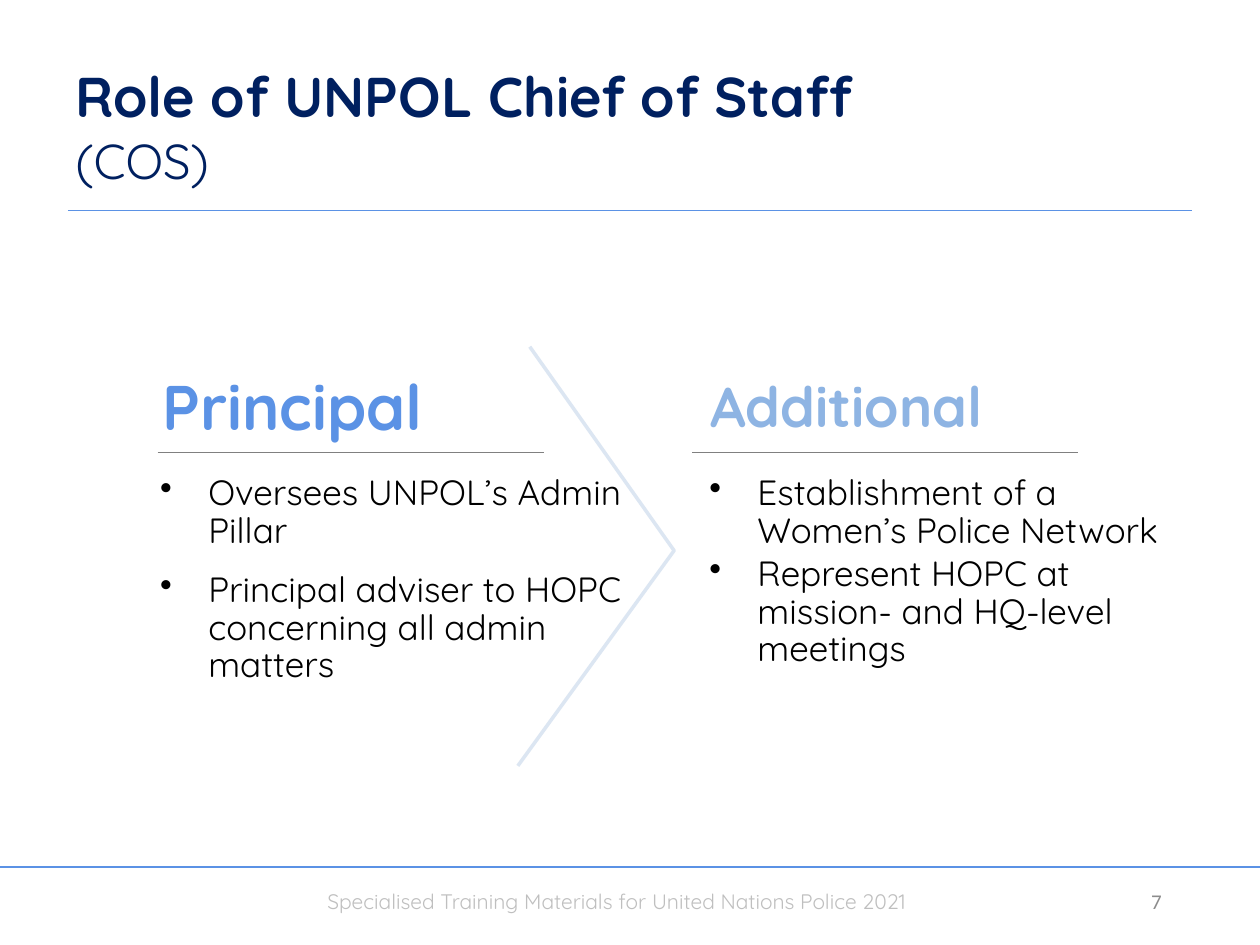
from dataclasses import dataclass

from lxml.etree import SubElement
from pptx import Presentation
from pptx.dml.color import RGBColor
from pptx.enum.shapes import MSO_CONNECTOR as Connector
from pptx.enum.text import MSO_ANCHOR as Anchor, PP_ALIGN as Align
from pptx.oxml.ns import qn
from pptx.slide import Slide
from pptx.text.text import TextFrame, _Paragraph as Paragraph
from pptx.util import Cm, Pt

COLOURS = {
    "navy": "002060",
    "blue": "5B92E5",
    "sky": "8EB4E3",
    "pale": "DCE6F2",
    "grey": "808080",
    "footer": "BFBFBF",
    "number": "8C8C8C",
    "black": "000000",
}
FONT = "Quicksand"
HEADING_TOP, RULE_TOP, DUTIES_TOP = 6.99, 9.12, 9.53
HANGING = 0.97


@dataclass
class Box:
    """A rectangle in centimetres."""

    left: float
    top: float
    width: float
    height: float


@dataclass
class RoleColumn:
    """A heading with a rule and its bulleted duties."""

    heading: str
    colour: str
    size: int
    heading_left: float
    heading_inset: float
    rule_left: float
    duties_left: float
    duties_width: float
    duties_height: float
    duties: list[tuple[str, float]]


COLUMNS = [
    RoleColumn("Principal", "blue", 36, 2.34, 0.38, 3.18, 3.18, 9.55, 5.87, [
        ("Oversees UNPOL’s Admin Pillar", 12.2),
        ("Principal adviser to HOPC concerning all admin matters", 3),
    ]),
    RoleColumn("Additional", "sky", 32, 13.51, 0.33, 13.95, 14.25, 9.47, 5.54, [
        ("Establishment of a Women’s Police Network", 3),
        ("Represent HOPC at mission- and HQ-level meetings", 3),
    ]),
]


def rgb(colour: str) -> RGBColor:
    """Look up a named colour."""
    return RGBColor.from_string(COLOURS[colour])


def add_frame(slide: Slide, box: Box, anchor: Anchor = Anchor.TOP,
              insets: tuple[float, float] = (0.25, 0.13)) -> TextFrame:
    """Add a wrapping text box and return its frame."""
    frame = slide.shapes.add_textbox(
        Cm(box.left), Cm(box.top), Cm(box.width), Cm(box.height)).text_frame
    frame.word_wrap = True
    frame.vertical_anchor = anchor
    frame.margin_left = frame.margin_right = Cm(insets[0])
    frame.margin_top = frame.margin_bottom = Cm(insets[1])
    return frame


def add_run(paragraph: Paragraph, words: str, size: int, colour: str,
            bold: bool = False, font: str = FONT) -> None:
    """Append a styled run."""
    run = paragraph.add_run()
    run.text = words
    run.font.name = font
    run.font.size = Pt(size)
    run.font.bold = bold
    run.font.color.rgb = rgb(colour)


def add_rule(slide: Slide, left: float, right: float, top: float, colour: str) -> None:
    """Draw a thin horizontal line."""
    rule = slide.shapes.add_connector(
        Connector.STRAIGHT, Cm(left), Cm(top), Cm(right), Cm(top))
    rule.line.color.rgb = rgb(colour)
    rule.line.width = Pt(0.75)
    SubElement(rule._element.spPr, qn("a:effectLst"))


def add_title(slide: Slide) -> None:
    """Write the two-line title."""
    title = add_frame(slide, Box(1.27, 1.27, 19.89, 2.67), Anchor.BOTTOM).paragraphs[0]
    title.line_spacing = Pt(34.4)
    add_run(title, "Role of UNPOL Chief of Staff ", 32, "navy", bold=True)
    title.add_line_break()
    add_run(title, "(COS)", 28, "navy")


def add_footer(slide: Slide) -> None:
    """Write the footer and the page number."""
    footer = add_frame(slide, Box(6.35, 17.78, 12.7, 0.76)).paragraphs[0]
    add_run(footer, "Specialised Training Materials for United Nations Police 2021",
            12, "footer")
    number = add_frame(slide, Box(21.84, 17.65, 1.83, 1.02), Anchor.MIDDLE).paragraphs[0]
    number.alignment = Align.RIGHT
    add_run(number, "7", 12, "number", font="Calibri")


def add_duties(slide: Slide, column: RoleColumn) -> None:
    """Write the bulleted duties of a column."""
    frame = add_frame(
        slide,
        Box(column.duties_left, DUTIES_TOP, column.duties_width, column.duties_height),
        insets=(0.05, 0.05))
    for index, (duty, space_after) in enumerate(column.duties):
        paragraph = frame.add_paragraph() if index else frame.paragraphs[0]
        properties = paragraph._p.get_or_add_pPr()
        properties.set("marL", str(Cm(HANGING)))
        properties.set("indent", str(-Cm(HANGING)))
        SubElement(properties, qn("a:buChar"), char="•")
        paragraph.line_spacing = 0.9
        paragraph.space_after = Pt(space_after)
        add_run(paragraph, duty, 20, "black")


def add_column(slide: Slide, column: RoleColumn) -> None:
    """Draw one role column."""
    add_duties(slide, column)
    heading = add_frame(slide, Box(column.heading_left, HEADING_TOP, 7.11, 2.54),
                        Anchor.MIDDLE, (column.heading_inset, 0.18)).paragraphs[0]
    heading.alignment = Align.CENTER
    heading.line_spacing = 0.9
    add_run(heading, column.heading, column.size, column.colour, bold=True)
    add_rule(slide, column.rule_left, column.rule_left + 7.78, RULE_TOP, "grey")


def add_chevron(slide: Slide) -> None:
    """Draw the open chevron between the columns."""
    builder = slide.shapes.build_freeform(Cm(10.68), Cm(6.99))
    builder.add_line_segments(
        [(Cm(13.59), Cm(11.1)), (Cm(10.44), Cm(15.44))], close=False)
    chevron = builder.convert_to_shape()
    chevron.shadow.inherit = False
    chevron.fill.background()
    chevron.line.color.rgb = rgb("pale")
    chevron.line.width = Pt(2)


def main() -> None:
    """Build and save the slide."""
    deck = Presentation()
    deck.slide_width, deck.slide_height = Cm(25.4), Cm(19.05)
    slide = deck.slides.add_slide(deck.slide_layouts[6])
    add_rule(slide, 0, 25.4, 17.48, "blue")
    add_rule(slide, 1.37, 24.03, 4.24, "blue")
    add_footer(slide)
    add_title(slide)
    for column in COLUMNS:
        add_column(slide, column)
    add_chevron(slide)
    deck.save("out.pptx")


if __name__ == "__main__":
    main()
